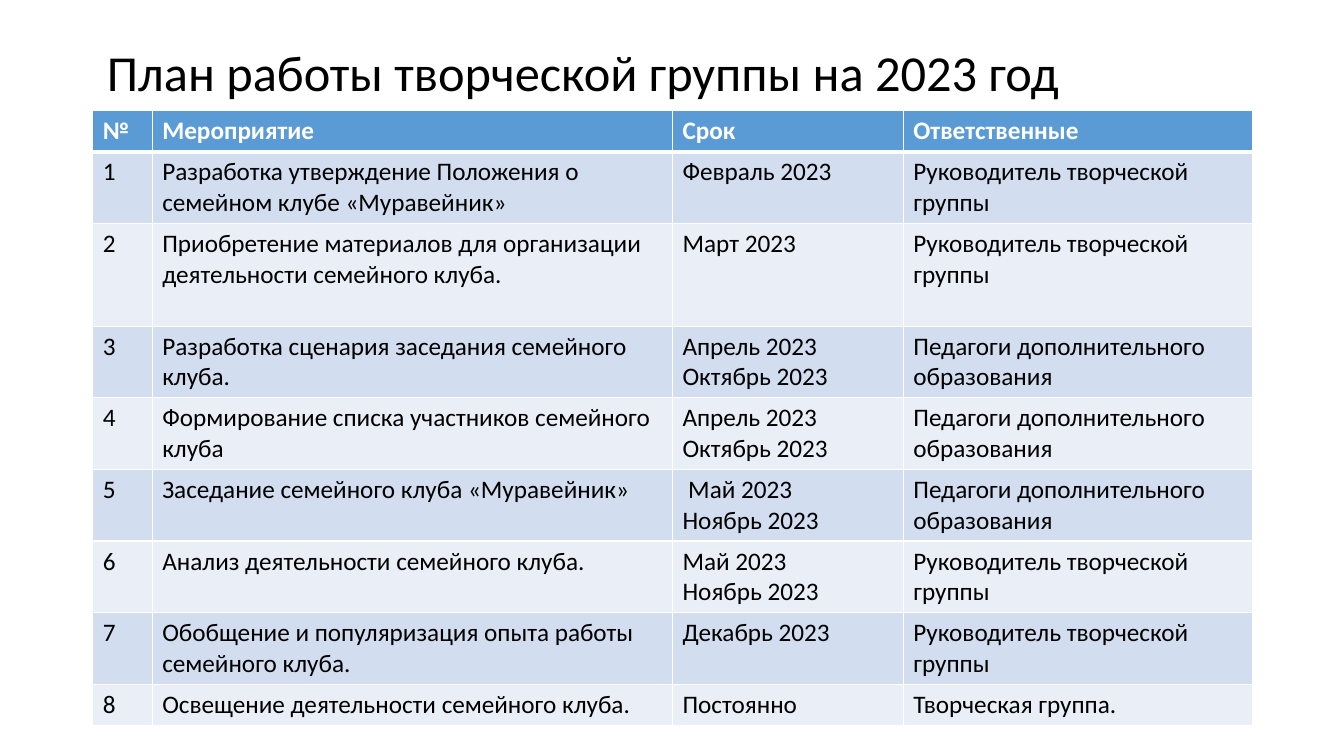
from lxml import etree
from pptx import Presentation
from pptx.dml.color import RGBColor
from pptx.enum.text import MSO_ANCHOR, PP_ALIGN
from pptx.oxml.ns import qn
from pptx.util import Inches, Pt

MIDDLE, TOP = MSO_ANCHOR.MIDDLE, MSO_ANCHOR.TOP
LEFT = PP_ALIGN.LEFT
FONT = "Calibri"
COLORS = {
    "black": "000000",
    "white": "FFFFFF",
    "head": "5B9BD5",
    "odd": "D2DEEF",
    "even": "EAEFF7",
}
TITLE = "План работы творческой группы на 2023 год"
LEAD = "Руководитель творческой группы"
STAFF = "Педагоги дополнительного образования"
HEADS = ["№", "Мероприятие", "Срок", "Ответственные"]
TASKS = [
    ("Разработка утверждение Положения о семейном клубе «Муравейник»",
     "Февраль 2023", LEAD),
    ("Приобретение материалов для организации деятельности семейного клуба.",
     "Март 2023", LEAD),
    ("Разработка сценария заседания семейного клуба.",
     "Апрель 2023\nОктябрь 2023", STAFF),
    ("Формирование списка участников семейного клуба",
     "Апрель 2023\nОктябрь 2023", STAFF),
    ("Заседание семейного клуба «Муравейник»",
     " Май 2023\nНоябрь 2023", STAFF),
    ("Анализ деятельности семейного клуба.",
     "Май 2023\nНоябрь 2023", LEAD),
    ("Обобщение и популяризация опыта работы семейного клуба.",
     "Декабрь 2023", LEAD),
    ("Освещение деятельности семейного клуба.",
     "Постоянно", "Творческая группа."),
]
WIDTHS = [0.59, 5.16, 2.29, 3.46]
HEIGHTS = [0.4, 0.71, 1.02] + [0.71] * 5 + [0.4]


def put_text(frame, text, size=18, color="black", bold=False, space=1.0):
    frame.text = text
    for para in frame.paragraphs:
        para.alignment = LEFT
        para.line_spacing = space
        for run in para.runs:
            font = run.font
            font.name = FONT
            font.size = Pt(size)
            font.bold = bold
            font.color.rgb = RGBColor.from_string(COLORS[color])


def add_edge(cell, side, width):
    props = cell._tc.get_or_add_tcPr()
    line = etree.SubElement(props, qn(f"a:ln{side}"), w=str(Pt(width)))
    fill = etree.SubElement(line, qn("a:solidFill"))
    etree.SubElement(fill, qn("a:srgbClr"), val=COLORS["white"])


def style_cell(cell, row):
    for side in "LRTB":
        thick = (row, side) in ((0, "B"), (1, "T"))
        add_edge(cell, side, 3 if thick else 1)
    band = "head" if row == 0 else "odd" if row % 2 else "even"
    cell.fill.solid()
    cell.fill.fore_color.rgb = RGBColor.from_string(COLORS[band])
    cell.vertical_anchor = TOP


def add_title(slide):
    title = slide.shapes.title
    title.left, title.top = Inches(0.96), Inches(0.25)
    title.width, title.height = Inches(11.5), Inches(0.99)
    frame = title.text_frame
    frame.word_wrap = True
    frame.vertical_anchor = MIDDLE
    put_text(frame, TITLE, size=36, space=0.9)


def add_plan(slide):
    rows = [HEADS] + [(str(num), *task) for num, task in enumerate(TASKS, 1)]
    table = slide.shapes.add_table(
        len(rows), len(HEADS), Inches(0.92), Inches(1.1),
        Inches(sum(WIDTHS)), Inches(sum(HEIGHTS))).table
    for col, width in zip(table.columns, WIDTHS):
        col.width = Inches(width)
    for row, (height, texts) in enumerate(zip(HEIGHTS, rows)):
        table.rows[row].height = Inches(height)
        head = row == 0
        for col, text in enumerate(texts):
            cell = table.cell(row, col)
            style_cell(cell, row)
            put_text(cell.text_frame, text, bold=head,
                     color="white" if head else "black")


def main():
    deck = Presentation()
    deck.slide_width, deck.slide_height = Inches(13.33), Inches(7.5)
    slide = deck.slides.add_slide(deck.slide_layouts[5])
    add_title(slide)
    add_plan(slide)
    deck.save("out.pptx")


if __name__ == "__main__":
    main()
